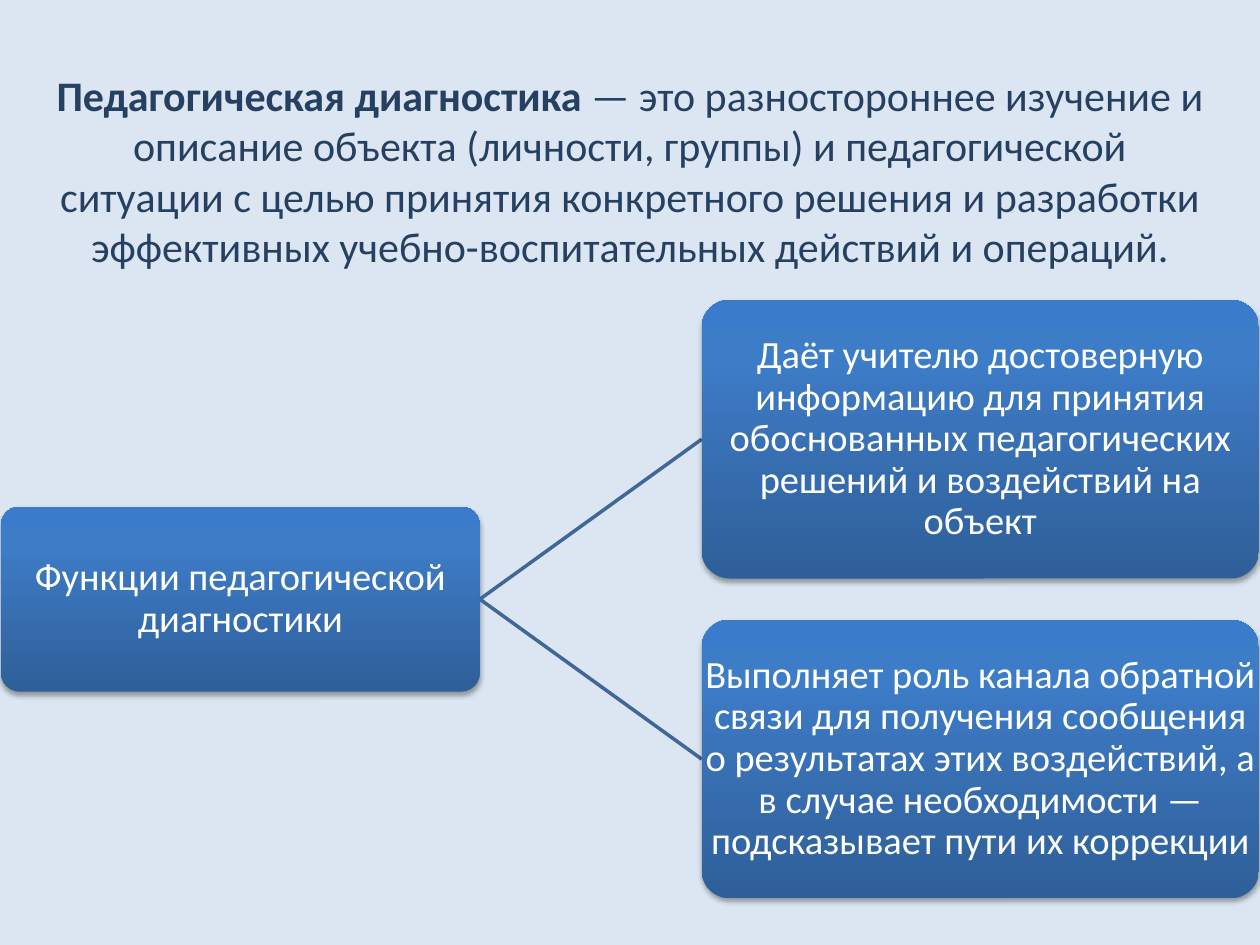
from copy import deepcopy

from lxml import etree
from pptx import Presentation
from pptx.dml.color import RGBColor
from pptx.enum.shapes import MSO_CONNECTOR, MSO_SHAPE
from pptx.enum.text import MSO_ANCHOR, MSO_AUTO_SIZE, PP_ALIGN
from pptx.oxml.ns import qn
from pptx.util import Pt

FONT = "Calibri"
GRADIENT = [(0, "2F5F99"), (0.8, "3D7CC7"), (1, "3A7CCB")]
TERM = "Педагогическая диагностика "
DEFINITION = (
    "— это разностороннее изучение и описание объекта (личности, группы) "
    "и педагогической ситуации с целью принятия конкретного решения и разработки "
    "эффективных учебно-воспитательных действий и операций."
)
ROOT = "Функции педагогической диагностики"
FUNCTIONS = [
    "Даёт учителю достоверную информацию для принятия обоснованных "
    "педагогических решений и воздействий на объект",
    "Выполняет роль канала обратной связи для получения сообщения о результатах "
    "этих воздействий, а в случае необходимости — подсказывает пути их коррекции",
]


def color(value):
    return RGBColor.from_string(value)


def format_run(run, size, value, bold=False):
    run.font.name = FONT
    run.font.size = Pt(size)
    run.font.bold = bold
    run.font.color.rgb = color(value)


def add_title(slide, left, top, width, height):
    title = slide.shapes.title
    title.left, title.top, title.width, title.height = map(Pt, (left, top, width, height))
    frame = title.text_frame
    frame.auto_size = MSO_AUTO_SIZE.NONE
    frame.vertical_anchor = MSO_ANCHOR.MIDDLE
    paragraph = frame.paragraphs[0]
    paragraph.alignment = PP_ALIGN.CENTER
    for text, bold in ((TERM, True), (DEFINITION, False)):
        run = paragraph.add_run()
        run.text = text
        format_run(run, 24, "254061", bold)


def fill_gradient(shape):
    """Fill from the dark bottom edge to the light top edge."""
    shape.fill.gradient()
    stop_list = shape._element.spPr.find(".//" + qn("a:gsLst"))
    stop_list.append(deepcopy(stop_list[0]))
    for stop, (position, value) in zip(shape.fill.gradient_stops, GRADIENT):
        stop.position = position
        stop.color.rgb = color(value)
    shape.fill.gradient_angle = 90


def add_shadow(shape):
    shape.shadow.inherit = False
    effects = shape._element.spPr.find(qn("a:effectLst"))
    shadow = etree.SubElement(
        effects, qn("a:outerShdw"), blurRad=str(Pt(3.1)), dist=str(Pt(1.8)),
        dir="5400000", rotWithShape="0",
    )
    shade = etree.SubElement(shadow, qn("a:srgbClr"), val="000000")
    etree.SubElement(shade, qn("a:alpha"), val="35000")


def add_node(slide, text, left, top, width, height):
    """Add a rounded box whose label may use its full width."""
    box = [Pt(length) for length in (left, top, width, height)]
    shape = slide.shapes.add_shape(MSO_SHAPE.ROUNDED_RECTANGLE, *box)
    shape.adjustments[0] = 0.1
    fill_gradient(shape)
    shape.line.fill.background()
    add_shadow(shape)

    frame = slide.shapes.add_textbox(*box).text_frame
    frame.word_wrap = True
    frame.vertical_anchor = MSO_ANCHOR.MIDDLE
    frame.margin_left = frame.margin_right = Pt(1.1)
    frame.margin_top = frame.margin_bottom = Pt(1.1)
    frame.text = text
    paragraph = frame.paragraphs[0]
    paragraph.alignment = PP_ALIGN.CENTER
    paragraph.line_spacing = 0.9
    format_run(paragraph.runs[0], 22, "FFFFFF")


def add_branch(slide, *ends):
    connector = slide.shapes.add_connector(MSO_CONNECTOR.STRAIGHT, *map(Pt, ends))
    connector.line.color.rgb = color("3F6797")
    connector.line.width = Pt(2)
    etree.SubElement(connector._element.spPr, qn("a:effectLst"))


def add_hierarchy(slide, left, top, width, height):
    """Place the root at the left and the functions stacked at the right."""
    root_width, root_height = 273.6, 105.8
    child_width, child_height = 318.4, 159.2
    center = top + height / 2
    child_left = left + width - child_width
    step = (height - child_height) / (len(FUNCTIONS) - 1)

    add_node(slide, ROOT, left, center - root_height / 2, root_width, root_height)
    for index, text in enumerate(FUNCTIONS):
        child_top = top + index * step
        add_branch(slide, left + root_width, center, child_left, child_top + child_height / 2)
        add_node(slide, text, child_left, child_top, child_width, child_height)


def main():
    presentation = Presentation()
    presentation.slide_width, presentation.slide_height = Pt(720), Pt(540)
    slide = presentation.slides.add_slide(presentation.slide_layouts[5])
    slide.background.fill.solid()
    slide.background.fill.fore_color.rgb = color("DCE6F2")
    add_title(slide, 20, 43.2, 680, 108)
    add_hierarchy(slide, 0.6, 171.4, 718.8, 342)
    presentation.save("out.pptx")


if __name__ == "__main__":
    main()
